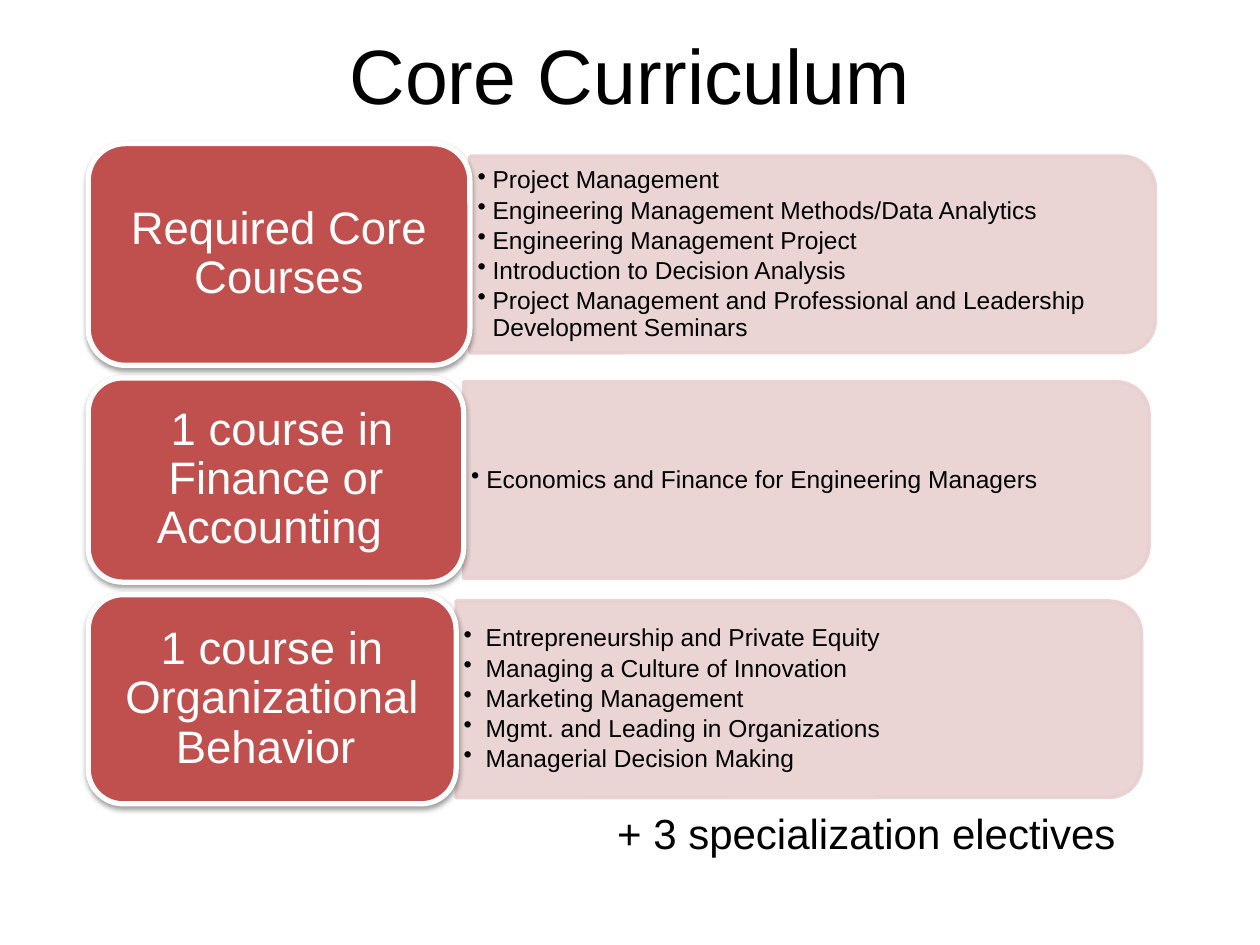
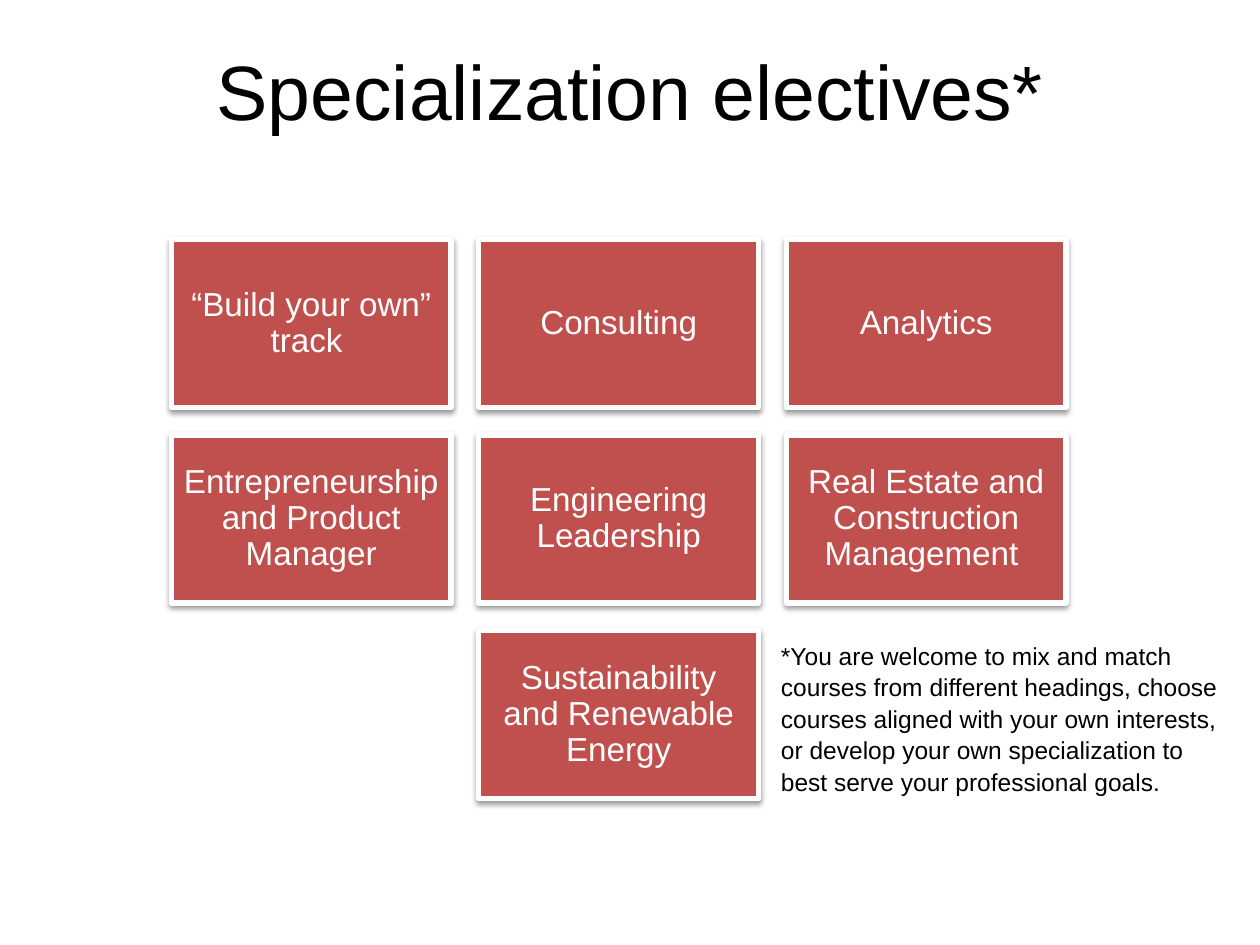
import collections

import lxml.etree
import pptx
import pptx.dml.color
import pptx.enum.shapes
import pptx.enum.text
import pptx.oxml.ns
import pptx.util

# Both slides use a grid of 100 columns by 75 rows of square cells.
CELL = pptx.util.Inches(0.1)
COLUMNS, ROWS = 100, 75
FONT = "Arial"
RED, PINK, WHITE, BLACK = "C0504D", "E8D0D0", "FFFFFF", "000000"

ALIGN = pptx.enum.text.PP_ALIGN
ANCHOR = pptx.enum.text.MSO_ANCHOR
SHAPE = pptx.enum.shapes.MSO_SHAPE
Box = collections.namedtuple("Box", "left top width height")
Category = collections.namedtuple("Category", "heading width height courses indent")

CATEGORIES = [
    Category("Required Core Courses", 30.3, 17.6, [
        "Project Management",
        "Engineering Management Methods/Data Analytics",
        "Engineering Management Project",
        "Introduction to Decision Analysis",
        "Project Management and Professional and Leadership Development Seminars",
    ], 1.2),
    Category(" 1 course in Finance or Accounting ", 29.8, 16.2, [
        "Economics and Finance for Engineering Managers",
    ], 1.2),
    Category("1 course in Organizational Behavior ", 29.2, 16.6, [
        "Entrepreneurship and Private Equity",
        "Managing a Culture of Innovation",
        "Marketing Management",
        "Mgmt. and Leading in Organizations",
        "Managerial Decision Making",
    ], 1.75),
]
TRACKS = [
    ["“Build your own” track ", "Consulting", "Analytics"],
    ["Entrepreneurship and Product Manager", "Engineering Leadership",
     "Real Estate and Construction Management "],
    ["Sustainability and Renewable Energy"],
]
MIX_NOTE = ("*You are welcome to mix and match courses from different headings, "
            "choose courses aligned with your own interests, or develop your own "
            "specialization to best serve your professional goals.")


def rgb(color):
    return pptx.dml.color.RGBColor.from_string(color)


def cells(*lengths):
    return [round(length * CELL) for length in lengths]


def add_xml(parent, tag, **attributes):
    element = lxml.etree.SubElement(parent, pptx.oxml.ns.qn(tag))
    for name, value in attributes.items():
        element.set(name, str(value))
    return element


def add_shape(slide, kind, box, fill, line, line_width):
    shape = slide.shapes.add_shape(kind, *cells(*box))
    shape.shadow.inherit = False
    shape.fill.solid()
    shape.fill.fore_color.rgb = rgb(fill)
    shape.line.color.rgb = rgb(line)
    shape.line.width = pptx.util.Pt(line_width)
    return shape


def write(shape, lines, size, color=BLACK, align=ALIGN.LEFT, anchor=ANCHOR.TOP,
          insets=(1, 0.5), spacing=1.0, after=0, indent=0, wrap=True):
    """Fill a shape with paragraphs; a positive indent makes them bullets."""
    frame = shape.text_frame
    frame.word_wrap = wrap
    frame.vertical_anchor = anchor
    frame.margin_left = frame.margin_right = cells(insets[0])[0]
    frame.margin_top = frame.margin_bottom = cells(insets[1])[0]
    for index, line in enumerate(lines):
        paragraph = frame.add_paragraph() if index else frame.paragraphs[0]
        if indent:
            properties = paragraph._p.get_or_add_pPr()
            margin = cells(indent)[0]
            properties.set("marL", str(margin))
            properties.set("indent", str(-margin))
            add_xml(properties, "a:buChar", char="•")
        paragraph.alignment = align
        paragraph.line_spacing = spacing
        paragraph.space_after = pptx.util.Pt(after)
        run = paragraph.add_run()
        run.text = line
        run.font.name = FONT
        run.font.size = pptx.util.Pt(size)
        run.font.color.rgb = rgb(color)


def add_text(slide, box, lines, size, **style):
    write(slide.shapes.add_textbox(*cells(*box)), lines, size, **style)


def add_title(slide, text, box):
    add_text(slide, box, [text], 44, align=ALIGN.CENTER)


def add_card(slide, kind, box, text, size, insets):
    """Add a red card with a white edge and a soft shadow below."""
    card = add_shape(slide, kind, box, RED, WHITE, 3)
    effects = card._element.spPr.find(pptx.oxml.ns.qn("a:effectLst"))
    shadow = add_xml(effects, "a:outerShdw", blurRad=pptx.util.Pt(3.1),
                     dist=pptx.util.Pt(1.6), dir=90 * 60000, rotWithShape=0)
    shadow_color = add_xml(shadow, "a:srgbClr", val=BLACK)
    add_xml(shadow_color, "a:alpha", val=38000)
    write(card, [text], size, color=WHITE, align=ALIGN.CENTER,
          anchor=ANCHOR.MIDDLE, insets=insets, spacing=0.9, after=size * 0.35)


def add_course_panel(slide, box, courses, indent):
    """Add a pink panel, rounded on the right, with its bulleted courses."""
    middle_x, middle_y = box.left + box.width / 2, box.top + box.height / 2
    upright = Box(middle_x - box.height / 2, middle_y - box.width / 2,
                  box.height, box.width)
    panel = add_shape(slide, SHAPE.ROUND_2_SAME_RECTANGLE, upright, PINK, PINK, 2)
    panel.rotation = 90
    for color in panel._element.spPr.iter(pptx.oxml.ns.qn("a:srgbClr")):
        add_xml(color, "a:alpha", val=90000)
    margin = 0.75
    text_box = Box(box.left, box.top + margin, box.width - margin,
                   box.height - 2 * margin)
    add_text(slide, text_box, courses, 14, anchor=ANCHOR.MIDDLE,
             insets=(0.6, 0.3), spacing=0.9, after=2.1, indent=indent)


def add_category(slide, box, category):
    """Add a heading card and, level with its middle, its course panel."""
    panel_height = 15.6
    panel = Box(box.left + category.width,
                box.top + (box.height - panel_height) / 2,
                box.width - category.width, panel_height)
    add_course_panel(slide, panel, category.courses, category.indent)
    heading = box._replace(width=category.width)
    add_card(slide, SHAPE.ROUNDED_RECTANGLE, heading, category.heading, 26, (1.1, 0.5))


def add_track_grid(slide, box, tracks):
    """Lay cards out in centred rows that fill the box."""
    gap = 2.2
    columns = max(map(len, tracks))
    width = (box.width - gap * (columns - 1)) / columns
    height = (box.height - gap * (len(tracks) - 1)) / len(tracks)
    for row, names in enumerate(tracks):
        first_column = (columns - len(names)) / 2
        for column, name in enumerate(names, 0):
            card = Box(box.left + (first_column + column) * (width + gap),
                       box.top + row * (height + gap), width, height)
            add_card(slide, SHAPE.RECTANGLE, card, name, 19, (0.8, 0.8))


def build_core_slide(slide):
    add_title(slide, "Core Curriculum", Box(0, 1.7, COLUMNS, 12.5))
    top, gap, panel_width = 11.4, 1, 54.4
    for category in CATEGORIES:
        box = Box(7, top, category.width + panel_width, category.height)
        add_category(slide, box, category)
        top += category.height + gap
    add_text(slide, Box(48, 63.6, 42, 5), ["+ 3 specialization electives"], 24, wrap=False)


def build_electives_slide(slide):
    add_title(slide, "Specialization electives*", Box(5, 3, COLUMNS - 10, 12.5))
    add_text(slide, Box(61, 50.2, 37.4, 13.6), [MIX_NOTE], 14, spacing=1.07, after=8)
    add_track_grid(slide, Box(13.6, 19, 71, 44.4), TRACKS)


def main():
    presentation = pptx.Presentation()
    presentation.slide_width, presentation.slide_height = cells(COLUMNS, ROWS)
    blank = presentation.slide_layouts[6]
    for build in (build_core_slide, build_electives_slide):
        build(presentation.slides.add_slide(blank))
    presentation.save("out.pptx")


if __name__ == "__main__":
    main()
